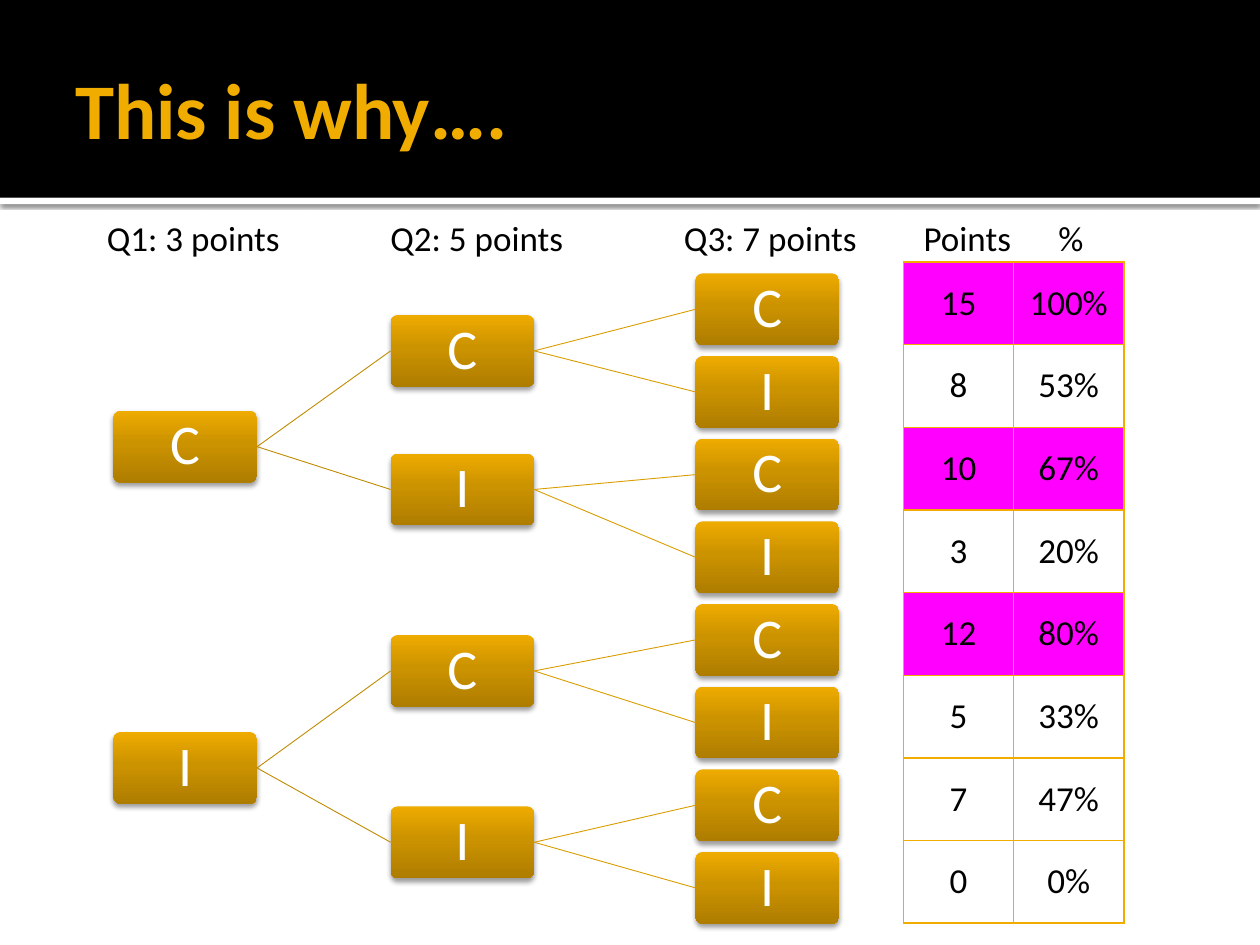
from dataclasses import dataclass, field
from typing import Any

import lxml.etree
import copy
import pptx
import pptx.dml.color
import pptx.enum.shapes
import pptx.enum.text
import pptx.oxml
import pptx.oxml.ns
import pptx.util

Inches = pptx.util.Inches
Pt = pptx.util.Pt
qn = pptx.oxml.ns.qn
SHAPE = pptx.enum.shapes.MSO_SHAPE
ALIGN = pptx.enum.text.PP_ALIGN
MIDDLE = pptx.enum.text.MSO_ANCHOR.MIDDLE

COLORS = {
    "black": "000000",
    "white": "FFFFFF",
    "gold": "F0AD00",
    "first_link": "C08B00",
    "second_link": "DA9D00",
    "pass": "FF00FF",
}
NODE_GRADIENT = [(0, "EEAB00"), (0.45, "CC9300"), (1, "AE7D00")]
NODE_W, NODE_H = 1.14, 0.57
COLUMN_X = [0.9, 3.1, 5.52]
LEAF_TOP, LEAF_STEP = 2.17, 0.656
ROW_H = 0.656
FONT = {"name": "Calibri", "size": Pt(20), "bold": False}


@dataclass
class Node:
    """One answer, C (correct) or I (incorrect), and the answers that follow."""
    label: str
    level: int
    top: float
    children: list["Node"] = field(default_factory=list)


@dataclass
class Caption:
    text: str
    left: float
    width: float


@dataclass
class Score:
    points: str
    percent: str
    passed: bool = False


def rgb(name: str) -> pptx.dml.color.RGBColor:
    return pptx.dml.color.RGBColor.from_string(COLORS.get(name, name))


def set_attrs(obj: Any, values: dict[str, Any]) -> None:
    for name, value in values.items():
        setattr(obj, name, value)


def write(tf: Any, text: str, color: str = "black", font: dict[str, Any] = {},
          para: dict[str, Any] = {}, frame: dict[str, Any] = {}) -> Any:
    set_attrs(tf, frame)
    p = tf.paragraphs[0]
    set_attrs(p, para)
    r = p.add_run()
    r.text = text
    set_attrs(r.font, FONT | font)
    r.font.color.rgb = rgb(color)
    return p


def add_shadow(sp: Any, alpha: int, blur: float, dist: float) -> None:
    effects = sp._element.spPr.find(qn("a:effectLst"))
    shadow = lxml.etree.SubElement(
        effects, qn("a:outerShdw"), blurRad=str(Pt(blur)), dist=str(Pt(dist)),
        dir="5400000", rotWithShape="0")
    color = lxml.etree.SubElement(shadow, qn("a:srgbClr"), val=COLORS["black"])
    lxml.etree.SubElement(color, qn("a:alpha"), val=str(alpha * 1000))


def add_band(s: Any, top: float, height: float, color: str) -> Any:
    sp = s.shapes.add_shape(SHAPE.RECTANGLE, 0, Inches(top), Inches(10), Inches(height))
    sp.fill.solid()
    sp.fill.fore_color.rgb = rgb(color)
    sp.line.fill.background()
    sp.shadow.inherit = False
    return sp


def add_node(s: Any, node: Node) -> Any:
    sp = s.shapes.add_shape(
        SHAPE.ROUNDED_RECTANGLE, Inches(COLUMN_X[node.level]), Inches(node.top),
        Inches(NODE_W), Inches(NODE_H))
    sp.adjustments[0] = 0.1
    sp.fill.gradient()
    sp.fill.gradient_angle = 270
    stops = sp._element.spPr.find(".//" + qn("a:gsLst"))
    stops.append(copy.deepcopy(stops[0]))
    for stop, (position, color) in zip(sp.fill.gradient_stops, NODE_GRADIENT):
        stop.position = position
        stop.color.rgb = rgb(color)
    sp.line.fill.background()
    sp.shadow.inherit = False
    add_shadow(sp, alpha=38, blur=3.1, dist=2)
    margins = dict.fromkeys(
        ["margin_left", "margin_top", "margin_right", "margin_bottom"], Inches(0.02))
    write(sp.text_frame, node.label, "white", {"size": Pt(32)},
          {"alignment": ALIGN.CENTER, "line_spacing": 0.9},
          margins | {"vertical_anchor": MIDDLE})
    return sp


def add_link(s: Any, parent: Any, child: Any, color: str) -> None:
    link = s.shapes.add_connector(pptx.enum.shapes.MSO_CONNECTOR.STRAIGHT, 0, 0, 0, 0)
    link.begin_connect(parent, 3)
    link.end_connect(child, 1)
    link.line.color.rgb = rgb(color)
    link.line.width = Pt(0.5)
    lxml.etree.SubElement(link._element.spPr, qn("a:effectLst"))


def add_tree(s: Any, node: Node) -> Any:
    sp = add_node(s, node)
    for child in node.children:
        add_link(s, sp, add_tree(s, child), ["first_link", "second_link"][node.level])
    return sp


def add_caption(s: Any, caption: Caption) -> Any:
    box = s.shapes.add_textbox(
        Inches(caption.left), Inches(1.67), Inches(caption.width), Inches(0.44))
    p = write(box.text_frame, caption.text, frame={"word_wrap": True})
    return box, p


def add_borders(cell: Any) -> None:
    tc_pr = cell._tc.get_or_add_tcPr()
    for i, side in enumerate(["a:lnL", "a:lnR", "a:lnT", "a:lnB"]):
        ln = tc_pr.makeelement(qn(side), {"w": str(Pt(1))})
        fill = lxml.etree.SubElement(ln, qn("a:solidFill"))
        lxml.etree.SubElement(fill, qn("a:srgbClr"), val=COLORS["gold"])
        tc_pr.insert(i, ln)


def add_scores(s: Any, scores: list[Score]) -> None:
    table = s.shapes.add_table(
        len(scores), 2, Inches(7.17), Inches(2.08),
        Inches(1.75), Inches(ROW_H * len(scores))).table
    set_attrs(table, {"first_row": False, "horz_banding": False})
    for row, score in zip(table.rows, scores):
        row.height = Inches(ROW_H)
        for cell, text in zip(row.cells, [score.points, score.percent]):
            cell.vertical_anchor = MIDDLE
            if score.passed:
                cell.fill.solid()
                cell.fill.fore_color.rgb = rgb("pass")
            else:
                cell.fill.background()
            add_borders(cell)
            write(cell.text_frame, text, para={"alignment": ALIGN.CENTER})


def main() -> None:
    prs = pptx.Presentation()
    set_attrs(prs, {"slide_width": Inches(10), "slide_height": Inches(7.5)})
    s = prs.slides.add_slide(prs.slide_layouts[6])

    # Header
    add_shadow(add_band(s, 1.57, 0.05, "white"), alpha=60, blur=2.5, dist=0.8)
    add_band(s, 0, 1.57, "black")
    title = s.shapes.add_textbox(Inches(0.5), Inches(0.17), Inches(9), Inches(1.37))
    write(title.text_frame, "This is why….", "gold", {"size": Pt(45), "bold": True},
          frame={"word_wrap": True, "vertical_anchor": MIDDLE})

    # Answer tree
    leaves = [Node("CI"[i % 2], 2, LEAF_TOP + i * LEAF_STEP) for i in range(8)]
    middles = [Node("CI"[i % 2], 1, top, leaves[2 * i:2 * i + 2])
               for i, top in enumerate([2.5, 3.6, 5.04, 6.4])]
    for i, top in enumerate([3.26, 5.81]):
        add_tree(s, Node("CI"[i], 0, top, middles[2 * i:2 * i + 2]))

    # Column captions
    for caption in [Caption("Q1: 3 points", 0.75, 1.58), Caption("Q2: 5 points", 3, 1.58),
                    Caption("Q3: 7 points", 5.33, 1.58)]:
        add_caption(s, caption)
    box, p = add_caption(s, Caption("Points\t%", 7.17, 1.75))
    box.text_frame.margin_left = Inches(0.16)
    tabs = lxml.etree.SubElement(p._p.get_or_add_pPr(), qn("a:tabLst"))
    lxml.etree.SubElement(tabs, qn("a:tab"), pos=str(Inches(1.07)), algn="l")

    # Scores
    add_scores(s, [
        Score("15", "100%", True), Score("8", "53%"), Score("10", "67%", True),
        Score("3", "20%"), Score("12", "80%", True), Score("5", "33%"),
        Score("7", "47%"), Score("0", "0%")])

    prs.save("out.pptx")


if __name__ == "__main__":
    main()
